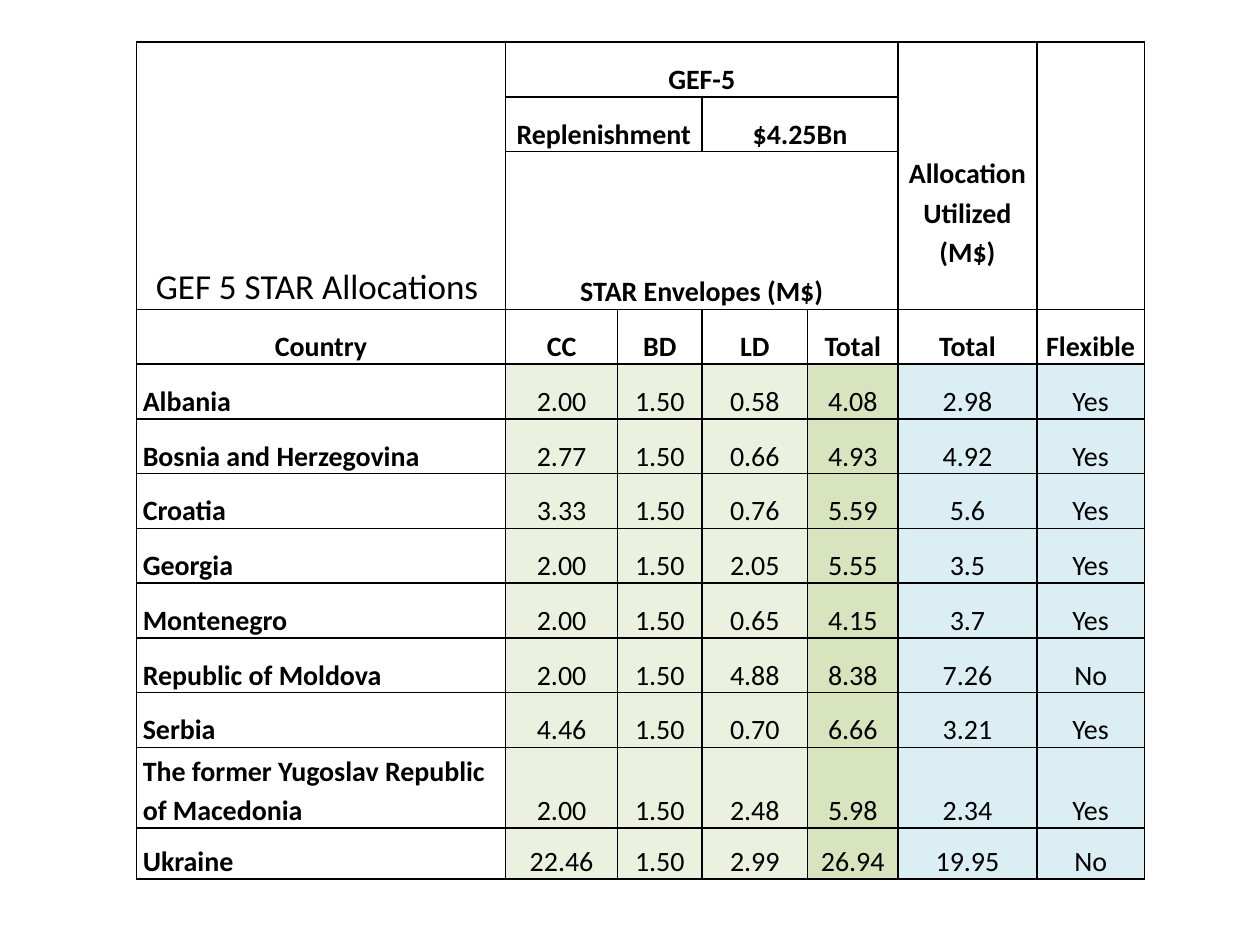
from lxml import etree
from pptx import Presentation
from pptx.dml.color import RGBColor
from pptx.enum.text import MSO_ANCHOR, PP_ALIGN
from pptx.oxml.ns import qn
from pptx.util import Pt

LEFT, CENTER = PP_ALIGN.LEFT, PP_ALIGN.CENTER
BOTTOM = MSO_ANCHOR.BOTTOM

COLORS = {
    "ink": "000000",
    "paper": "FFFFFF",
    "envelope": "EBF1DE",
    "envelope_total": "D7E4BD",
    "utilized": "DBEEF4",
}
FONT = "Calibri"
BODY_SIZE = 16
TITLE_SIZE = 20
LINE_SPACING = 1.15

COLUMN_WIDTHS = [210.9, 64, 48.3, 60.3, 51.7, 79.4, 61.4]
ROW_HEIGHTS = [31.3, 31.3, 90.2] + [31.3] * 8 + [46, 29.1]
COLUMN_FILLS = ["paper"] + ["envelope"] * 3 + ["envelope_total"] + ["utilized"] * 2

# First row, first column, last row, last column
MERGES = [
    (0, 0, 2, 0),
    (0, 1, 0, 4),
    (1, 1, 1, 2),
    (1, 3, 1, 4),
    (2, 1, 2, 4),
    (0, 5, 2, 5),
    (0, 6, 2, 6),
]
GROUP_HEADINGS = {
    (0, 1): "GEF-5",
    (0, 5): "Allocation Utilized\n(M$)",
    (1, 1): "Replenishment",
    (1, 3): "$4.25Bn",
    (2, 1): "STAR Envelopes (M$)",
}
HEADER_ROW = 3
HEADINGS = ["Country", "CC", "BD", "LD", "Total", "Total", "Flexible"]
COUNTRIES = [
    ["Albania", "2.00", "1.50", "0.58", "4.08", "2.98", "Yes"],
    ["Bosnia and Herzegovina", "2.77", "1.50", "0.66", "4.93", "4.92", "Yes"],
    ["Croatia", "3.33", "1.50", "0.76", "5.59", "5.6", "Yes"],
    ["Georgia", "2.00", "1.50", "2.05", "5.55", "3.5", "Yes"],
    ["Montenegro", "2.00", "1.50", "0.65", "4.15", "3.7", "Yes"],
    ["Republic of Moldova", "2.00", "1.50", "4.88", "8.38", "7.26", "No"],
    ["Serbia", "4.46", "1.50", "0.70", "6.66", "3.21", "Yes"],
    ["The former Yugoslav Republic of Macedonia",
     "2.00", "1.50", "2.48", "5.98", "2.34", "Yes"],
    ["Ukraine", "22.46", "1.50", "2.99", "26.94", "19.95", "No"],
]


def add_borders(cell):
    properties = cell._tc.get_or_add_tcPr()
    for side in ("a:lnL", "a:lnR", "a:lnT", "a:lnB"):
        line = etree.SubElement(properties, qn(side), w=str(Pt(1)))
        fill = etree.SubElement(line, qn("a:solidFill"))
        etree.SubElement(fill, qn("a:srgbClr"), val=COLORS["ink"])


def style_cell(cell, fill):
    add_borders(cell)
    cell.fill.solid()
    cell.fill.fore_color.rgb = RGBColor.from_string(COLORS[fill])
    cell.vertical_anchor = BOTTOM
    cell.margin_left = cell.margin_right = Pt(3.6)
    cell.margin_top = cell.margin_bottom = Pt(0)


def write_cell(cell, text, size=BODY_SIZE, bold=True, alignment=CENTER):
    cell.text_frame.text = text
    for paragraph in cell.text_frame.paragraphs:
        paragraph.alignment = alignment
        paragraph.line_spacing = LINE_SPACING
        for run in paragraph.runs:
            run.font.name = FONT
            run.font.size = Pt(size)
            run.font.bold = bold
            run.font.color.rgb = RGBColor.from_string(COLORS["ink"])


def add_grid(slide):
    shape = slide.shapes.add_table(
        len(ROW_HEIGHTS), len(COLUMN_WIDTHS), Pt(78), Pt(24),
        Pt(sum(COLUMN_WIDTHS)), Pt(sum(ROW_HEIGHTS)))
    table = shape.table
    table.first_row = table.horz_banding = False
    for column, width in zip(table.columns, COLUMN_WIDTHS):
        column.width = Pt(width)
    for row, height in zip(table.rows, ROW_HEIGHTS):
        row.height = Pt(height)
    for row_index, row in enumerate(table.rows):
        for cell, fill in zip(row.cells, COLUMN_FILLS):
            style_cell(cell, fill if row_index > HEADER_ROW else "paper")
    for top, left, bottom, right in MERGES:
        table.cell(top, left).merge(table.cell(bottom, right))
    return table


def fill_headings(table):
    write_cell(table.cell(0, 0), "GEF 5 STAR Allocations ", TITLE_SIZE, bold=False)
    for (row, column), text in GROUP_HEADINGS.items():
        write_cell(table.cell(row, column), text)
    # The allocation heading sits one line above the bottom
    table.cell(0, 5).margin_bottom = Pt(22.4)
    for column, text in enumerate(HEADINGS):
        write_cell(table.cell(HEADER_ROW, column), text)


def fill_countries(table):
    for row, (country, *values) in enumerate(COUNTRIES, HEADER_ROW + 1):
        write_cell(table.cell(row, 0), country, alignment=LEFT)
        for column, value in enumerate(values, 1):
            write_cell(table.cell(row, column), value, bold=False)


def main():
    presentation = Presentation()
    presentation.slide_width = Pt(720)
    presentation.slide_height = Pt(540)
    slide = presentation.slides.add_slide(presentation.slide_layouts[6])

    # Allocation table
    table = add_grid(slide)
    fill_headings(table)
    fill_countries(table)

    presentation.save("out.pptx")


if __name__ == "__main__":
    main()
